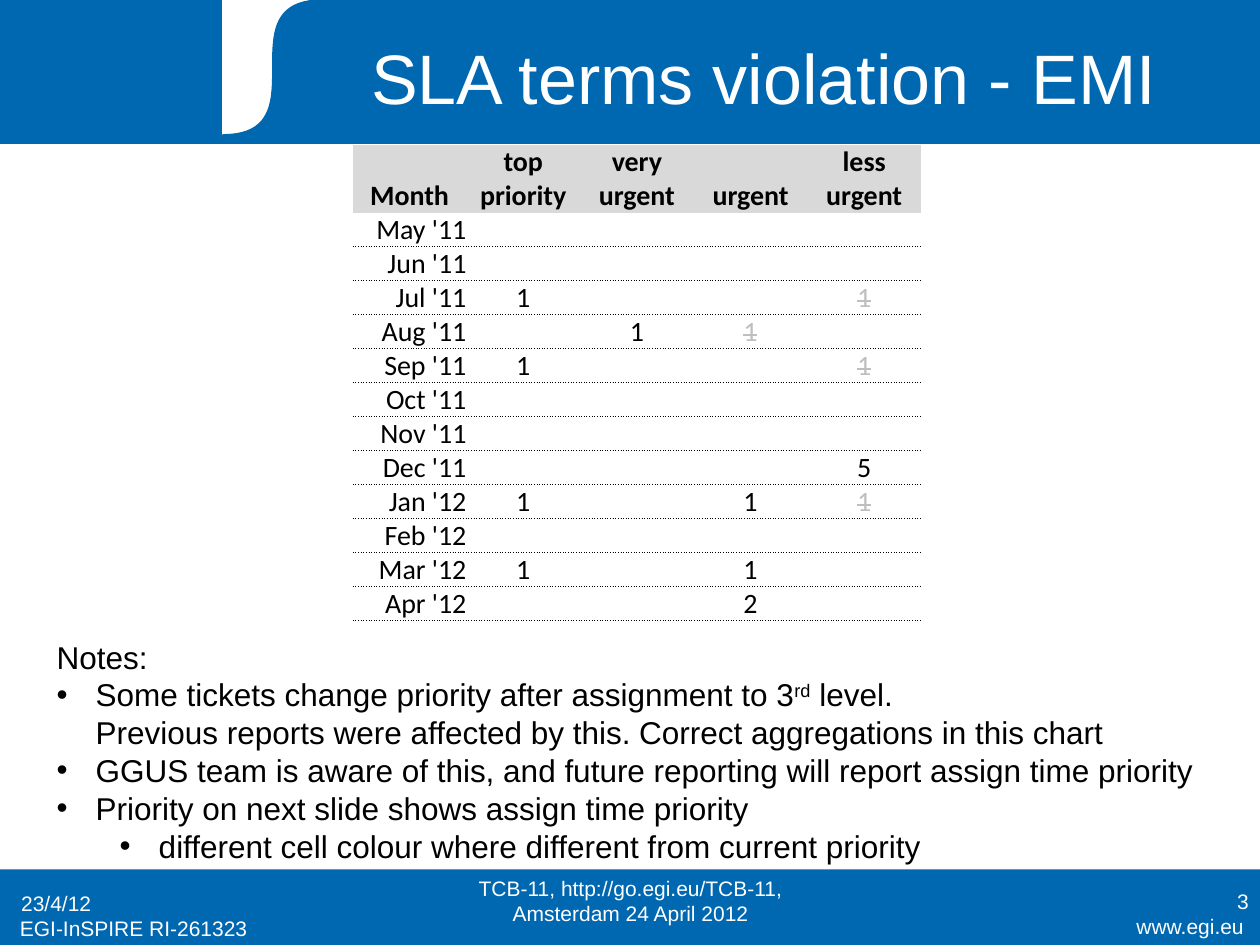
import pptx
import pptx.dml.color
import pptx.enum.shapes
import pptx.enum.text
import pptx.oxml
import pptx.oxml.ns
import pptx.oxml.xmlchemy
import pptx.util

Inches = pptx.util.Inches
Pt = pptx.util.Pt
ALIGN = pptx.enum.text.PP_ALIGN
ANCHOR = pptx.enum.text.MSO_ANCHOR

COLORS = {
    "blue": "0067B1",
    "white": "FFFFFF",
    "black": "000000",
    "header": "D9D9D9",
    "struck": "BFBFBF",
}
HEADINGS = ["Month", "top priority", "very urgent", "urgent", "less urgent"]
MONTHS = ["May '11", "Jun '11", "Jul '11", "Aug '11", "Sep '11", "Oct '11",
          "Nov '11", "Dec '11", "Jan '12", "Feb '12", "Mar '12", "Apr '12"]
VIOLATIONS = {
    ("Jul '11", "top priority"): "1",
    ("Aug '11", "very urgent"): "1",
    ("Sep '11", "top priority"): "1",
    ("Dec '11", "less urgent"): "5",
    ("Jan '12", "top priority"): "1",
    ("Jan '12", "urgent"): "1",
    ("Mar '12", "top priority"): "1",
    ("Mar '12", "urgent"): "1",
    ("Apr '12", "urgent"): "2",
}
STRUCK = {
    ("Jul '11", "less urgent"): "1",
    ("Aug '11", "urgent"): "1",
    ("Sep '11", "less urgent"): "1",
    ("Jan '12", "less urgent"): "1",
}
NOTES = [
    ("Notes:", None),
    ("Some tickets change priority after assignment to 3", 0),
    ("GGUS team is aware of this, and future reporting will report assign time priority", 0),
    ("Priority on next slide shows assign time priority", 0),
    ("different cell colour where different from current priority", 1),
]


def rgb(name):
    """Return a palette colour."""
    return pptx.dml.color.RGBColor.from_string(COLORS[name])


def add_child(parent, tag, **attributes):
    """Append a DrawingML element and return it."""
    child = pptx.oxml.xmlchemy.OxmlElement(tag)
    for key, value in attributes.items():
        child.set(key, value)
    parent.append(child)
    return child


def style_runs(paragraph, size, color, font="Arial", bold=False):
    """Format every run of a paragraph."""
    for run in paragraph.runs:
        run.font.name = font
        run.font.size = Pt(size)
        run.font.bold = bold
        run.font.color.rgb = rgb(color)


def paint(shape, color, outlined=True):
    """Give a shape a flat fill and an optional line of the same colour."""
    shape.shadow.inherit = False
    shape.fill.solid()
    shape.fill.fore_color.rgb = rgb(color)
    if outlined:
        shape.line.color.rgb = rgb(color)
        shape.line.width = Pt(0.75)
    else:
        shape.line.fill.background()


def add_block(slide, box, color, outlined=True):
    """Add a flat rectangle."""
    block = slide.shapes.add_shape(
        pptx.enum.shapes.MSO_SHAPE.RECTANGLE, *map(Inches, box))
    paint(block, color, outlined)


def place(shape, box):
    """Move a shape to a box given in inches."""
    shape.left, shape.top, shape.width, shape.height = map(Inches, box)


def add_banner(slide, box):
    """Draw the blue top band with its white S-shaped cut."""
    left, top, width, height = box
    add_block(slide, box, "blue")
    cut_left, cut_right, bottom = left + 1.77, left + 3.74, top + 1.07
    bend = 0.79
    add_block(slide, (cut_left, top, cut_right - cut_left, bottom - top), "white")
    steps = 40
    curve = []
    for step in range(steps + 1):
        t = step / steps
        x = cut_left + bend * (3 * t * (1 - t) ** 2 + t ** 3)
        y = top + (bottom - top) * ((1 - t) ** 3 + 3 * t * (1 - t) ** 2)
        curve.append((Inches(x), Inches(y)))
    builder = slide.shapes.build_freeform(Inches(cut_right), Inches(top))
    builder.add_line_segments([(Inches(cut_right), Inches(bottom))] + curve, close=True)
    paint(builder.convert_to_shape(), "blue")


def fill_title(title, box):
    """Set the slide title inside the banner."""
    place(title, box)
    frame = title.text_frame
    frame.text = "SLA terms violation - EMI"
    frame.auto_size = pptx.enum.text.MSO_AUTO_SIZE.NONE
    frame.vertical_anchor = ANCHOR.MIDDLE
    frame.paragraphs[0].alignment = ALIGN.CENTER
    style_runs(frame.paragraphs[0], 40, "white")


def add_footer(slide, box):
    """Draw the bottom band and its small labels."""
    left, top, width, height = box
    add_block(slide, box, "blue", outlined=False)
    labels = [
        ("www.egi.eu", 8.39, 0.3, 1.58, 0.31, ALIGN.RIGHT, ANCHOR.TOP),
        ("EGI-InSPIRE RI-261323", 0.06, 0.32, 2.5, 0.31, ALIGN.LEFT, ANCHOR.TOP),
        ("23/4/12", 0.07, 0.07, 2.33, 0.4, ALIGN.LEFT, ANCHOR.MIDDLE),
        ("TCB-11, http://go.egi.eu/TCB-11, Amsterdam 24 April 2012",
         3.42, 0.05, 3.17, 0.4, ALIGN.CENTER, ANCHOR.MIDDLE),
        ("3", 7.68, 0.05, 2.33, 0.4, ALIGN.RIGHT, ANCHOR.MIDDLE),
    ]
    for text, x, y, label_width, label_height, align, anchor in labels:
        label = slide.shapes.add_textbox(
            Inches(left + x), Inches(top + y), Inches(label_width), Inches(label_height))
        frame = label.text_frame
        frame.word_wrap = True
        frame.vertical_anchor = anchor
        frame.text = text
        frame.paragraphs[0].alignment = align
        style_runs(frame.paragraphs[0], 12, "white")


def set_borders(cell, dotted):
    """Dot the named cell edges and clear the others."""
    properties = cell._tc.get_or_add_tcPr()
    for edge in ("lnL", "lnR", "lnT", "lnB"):
        line = add_child(properties, f"a:{edge}", w=str(Pt(0.5)))
        if edge in dotted:
            fill = add_child(line, "a:solidFill")
            add_child(fill, "a:srgbClr", val=COLORS["black"])
            add_child(line, "a:prstDash", val="sysDot")
        else:
            add_child(line, "a:noFill")


def fill_cell(cell, text, align, header, struck, dotted):
    """Write and format one table cell."""
    set_borders(cell, dotted)
    cell.margin_left = cell.margin_right = cell.margin_top = cell.margin_bottom = 0
    cell.vertical_anchor = ANCHOR.BOTTOM if header else ANCHOR.MIDDLE
    if header:
        cell.fill.solid()
        cell.fill.fore_color.rgb = rgb("header")
    else:
        cell.fill.background()
    paragraph = cell.text_frame.paragraphs[0]
    paragraph.alignment = align
    if not text:
        add_child(paragraph._p, "a:endParaRPr", sz="1600")
        return
    paragraph.text = text
    style_runs(paragraph, 16, "struck" if struck else "black", "Calibri", header)
    if struck:
        paragraph.runs[0].font._element.set("strike", "sngStrike")


def add_violations(slide, box):
    """Build the table of violations by month and priority."""
    table = slide.shapes.add_table(
        len(MONTHS) + 1, len(HEADINGS), *map(Inches, box)).table
    table.first_row = table.horz_banding = False
    for column in table.columns:
        column.width = Inches(box[2] / len(HEADINGS))
    for index, row in enumerate(table.rows):
        row.height = Inches(0.27 if index else 0.54)
    for c, heading in enumerate(HEADINGS):
        fill_cell(table.cell(0, c), heading, ALIGN.CENTER, True, False, ())
        for r, month in enumerate(MONTHS, 1):
            key = (month, heading)
            text = VIOLATIONS.get(key, STRUCK.get(key, "")) if c else month
            fill_cell(table.cell(r, c), text, ALIGN.CENTER if c else ALIGN.RIGHT,
                      False, key in STRUCK, ("lnB",) if r == 1 else ("lnT", "lnB"))


def fill_notes(notes, box):
    """Write the notes list in the body placeholder."""
    place(notes, box)
    frame = notes.text_frame
    frame.auto_size = pptx.enum.text.MSO_AUTO_SIZE.NONE
    frame.word_wrap = True
    for index, (text, level) in enumerate(NOTES):
        paragraph = frame.add_paragraph() if index else frame.paragraphs[0]
        paragraph.text = text
        paragraph.level = level or 0
        paragraph.space_before = Pt(0)
        properties = paragraph._p.get_or_add_pPr()
        bulleted = level is not None
        properties.set("marL", str(Inches(0.31 + 0.5 * level) if bulleted else 0))
        properties.set("indent", str(Inches(-0.31) if bulleted else 0))
        if bulleted:
            add_child(properties, "a:buFont", typeface="Arial")
            add_child(properties, "a:buChar", char="•")
        else:
            add_child(properties, "a:buNone")
    ticket_note = frame.paragraphs[1]
    ordinal = ticket_note.add_run()
    ordinal.text = "rd"
    ordinal.font._element.set("baseline", "30000")
    ticket_note.add_run().text = " level."
    ticket_note.add_line_break()
    ticket_note.add_run().text = (
        "Previous reports were affected by this. Correct aggregations in this chart")
    for paragraph in frame.paragraphs:
        style_runs(paragraph, 18, "black")


def main():
    """Build and save the slide."""
    deck = pptx.Presentation()
    deck.slide_width, deck.slide_height = Inches(10), Inches(7.5)
    slide = deck.slides.add_slide(deck.slide_layouts[1])
    title, notes = slide.placeholders
    add_footer(slide, (0, 6.9, 10, 0.6))
    add_banner(slide, (0, 0, 10, 1.14))
    fill_title(title, (2.32, 0.13, 7.48, 0.95))
    add_violations(slide, (2.8, 1.15, 4.51, 3.78))
    fill_notes(notes, (0.35, 5.01, 9.4, 1.92))
    for placeholder in (title, notes):
        slide.shapes._spTree.append(placeholder._element)
    deck.save("out.pptx")


if __name__ == "__main__":
    main()
